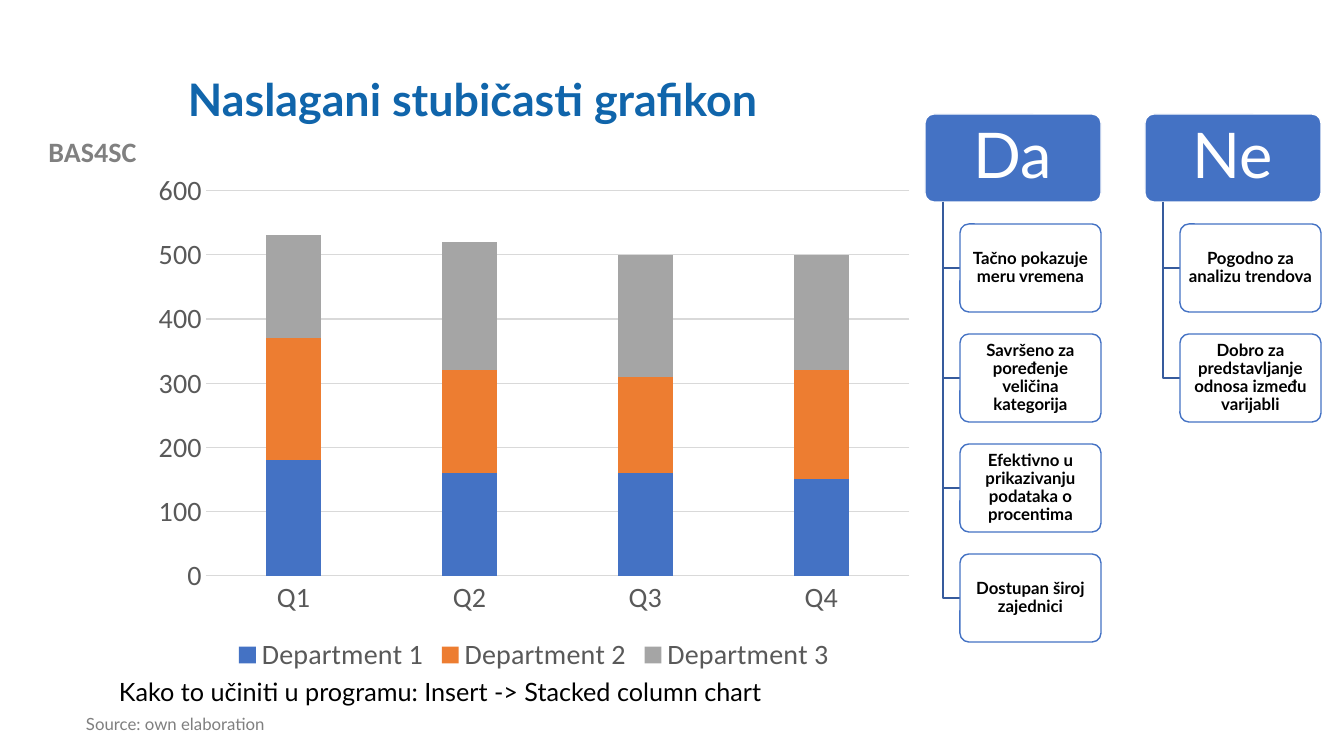
from lxml import etree
from pptx import Presentation
from pptx import util as u
from pptx.chart.data import CategoryChartData
from pptx.dml.color import RGBColor
from pptx.enum import chart as ch, shapes, text
from pptx.oxml.ns import qn

SCALE = 914400 / 100.8
COLORS = {
    "title": "1065AB", "project": "808080", "source": "7F7F7F", "text": "000000",
    "white": "FFFFFF", "blue": "4472C4", "orange": "ED7D31", "gray": "A5A5A5",
    "elbow": "365B9D", "axis": "595959", "grid": "D9D9D9",
}


def px(n):
    return u.Emu(round(n * SCALE))


def write(shape, words, size, color, bold=False, font="Lato", spacing=0.9,
          align=text.PP_ALIGN.LEFT, anchor=text.MSO_ANCHOR.TOP, insets=(10, 5)):
    frame = shape.text_frame
    frame.word_wrap = True
    frame.vertical_anchor = anchor
    frame.margin_left = frame.margin_right = px(insets[0])
    frame.margin_top = frame.margin_bottom = px(insets[1])
    line = frame.paragraphs[0]
    line.text = words
    line.alignment = align
    line.line_spacing = spacing
    line.font.name, line.font.size, line.font.bold = font, u.Pt(size), bold
    line.font.color.rgb = RGBColor.from_string(COLORS[color])


deck = Presentation()
deck.slide_width, deck.slide_height = px(1344), px(756)
slide = deck.slides.add_slide(deck.slide_layouts[6])
canvas = slide.shapes

# Project label, title and source
project = canvas.add_textbox(px(0), px(129), px(185), px(44))
write(project, "BAS4SC", 20, "project", True, "Calibri", 1.0, text.PP_ALIGN.CENTER)
title = canvas.add_textbox(px(178), px(40), px(1075), px(123))
write(title, "Naslagani stubičasti grafikon", 32, "title", True,
      anchor=text.MSO_ANCHOR.MIDDLE)
source = canvas.add_textbox(px(76), px(711), px(505), px(37))
write(source, "Source: own elaboration", 12, "source")

# Stacked column chart
departments = [
    ("Department 1", (180, 160, 160, 150), "blue"),
    ("Department 2", (190, 160, 150, 170), "orange"),
    ("Department 3", (160, 200, 190, 180), "gray"),
]
quarters = CategoryChartData()
quarters.categories = ["Q1", "Q2", "Q3", "Q4"]
for name, values, _ in departments:
    quarters.add_series(name, values)
chart = canvas.add_chart(ch.XL_CHART_TYPE.COLUMN_STACKED, px(143), px(163),
                         px(782), px(515), quarters).chart
chart.has_title = False
chart.has_legend = True
chart.legend.position = ch.XL_LEGEND_POSITION.BOTTOM
chart.legend.include_in_layout = False
chart.font.name, chart.font.size = "Calibri", u.Pt(20)
chart.font.color.rgb = RGBColor.from_string(COLORS["axis"])

columns = chart.plots[0]
columns.gap_width, columns.overlap = 219, 100
columns.vary_by_categories = False
for series, (_, _, color) in zip(columns.series, departments):
    series.format.fill.solid()
    series.format.fill.fore_color.rgb = RGBColor.from_string(COLORS[color])

amounts, periods = chart.value_axis, chart.category_axis
amounts.minimum_scale, amounts.maximum_scale, amounts.major_unit = 0, 600, 100
amounts.format.line.fill.background()
for axis in (amounts, periods):
    axis.major_tick_mark = axis.minor_tick_mark = ch.XL_TICK_MARK.NONE
for rule in (amounts.major_gridlines.format.line, periods.format.line):
    rule.color.rgb = RGBColor.from_string(COLORS["grid"])
    rule.width = u.Pt(0.75)

# Yes and no lists
verdicts = [
    ("Da", ["Tačno pokazuje meru vremena",
            "Savršeno za poređenje veličina kategorija",
            "Efektivno u prikazivanju podataka o procentima",
            "Dostupan široj zajednici"]),
    ("Ne", ["Pogodno za analizu trendova",
            "Dobro za predstavljanje odnosa između varijabli"]),
]
for col, (verdict, reasons) in enumerate(verdicts):
    left = 925 + 220 * col
    cards = [(verdict, left, 114, 176, "blue", "white", 45, "white", False, (9, 6))]
    cards += [(reason, left + 35, 224 + 110 * row, 141, "white", "blue", 12, "text",
               True, (3, 2)) for row, reason in enumerate(reasons)]
    for words, x, y, width, fill, border, size, ink, is_reason, insets in cards:
        if is_reason:
            pen = canvas.build_freeform(px(left + 18), px(202), scale=1.0)
            pen.add_line_segments([(px(left + 18), px(y + 44)), (px(x), px(y + 44))],
                                  close=False)
            elbow = pen.convert_to_shape()
            elbow.shadow.inherit = False
            elbow.fill.background()
            elbow.line.color.rgb = RGBColor.from_string(COLORS["elbow"])
            elbow.line.width = u.Pt(1)
        card = canvas.add_shape(shapes.MSO_SHAPE.ROUNDED_RECTANGLE,
                                px(x), px(y), px(width), px(88))
        card.adjustments[0] = 0.1
        card.shadow.inherit = False
        card.fill.solid()
        card.fill.fore_color.rgb = RGBColor.from_string(COLORS[fill])
        card.line.color.rgb = RGBColor.from_string(COLORS[border])
        card.line.width = u.Pt(1)
        if is_reason:
            tint = card.fill._xPr.find(qn("a:solidFill"))[0]
            etree.SubElement(tint, qn("a:alpha"), val="90000")
        write(card, words, size, ink, is_reason, align=text.PP_ALIGN.CENTER,
              anchor=text.MSO_ANCHOR.MIDDLE, insets=insets)

# How-to line
howto = canvas.add_textbox(px(109), px(671), px(794), px(42))
write(howto, "Kako to učiniti u programu: Insert -> Stacked column chart", 18, "text",
      spacing=1.0)

deck.save("out.pptx")
